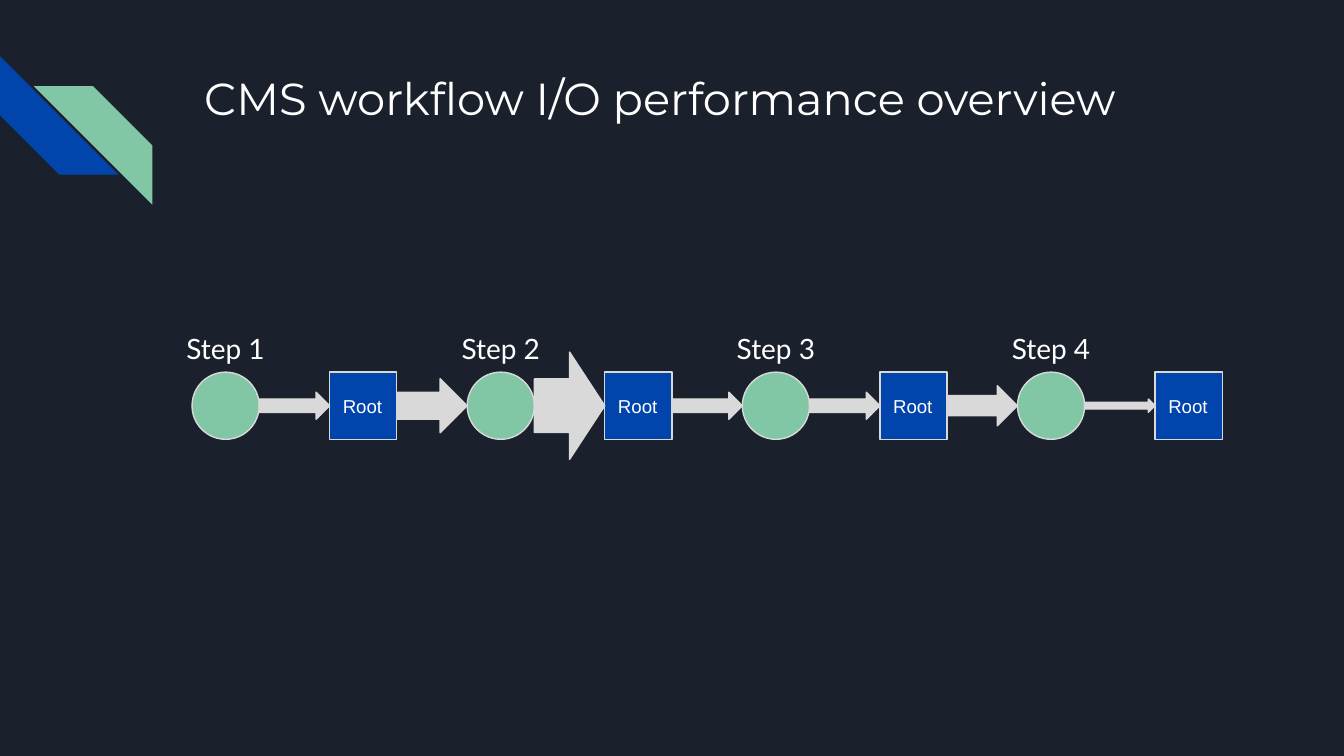
from dataclasses import dataclass

from pptx import Presentation
from pptx.dml.color import RGBColor
from pptx.enum.shapes import MSO_SHAPE
from pptx.enum.text import MSO_ANCHOR, MSO_AUTO_SIZE, PP_ALIGN
from pptx.util import Cm, Pt


@dataclass(frozen=True)
class Theme:
    background: RGBColor = RGBColor(0x1B, 0x21, 0x2C)
    blue: RGBColor = RGBColor(0x01, 0x45, 0xAC)
    green: RGBColor = RGBColor(0x82, 0xC7, 0xA5)
    grey: RGBColor = RGBColor(0xD9, 0xD9, 0xD9)
    white: RGBColor = RGBColor(0xFF, 0xFF, 0xFF)
    title_size: int = 24
    label_size: int = 15
    node_size: int = 10
    line_width: float = 0.75


theme = Theme()


def write_text(shape, text, *, font, size, align=PP_ALIGN.LEFT,
               anchor=MSO_ANCHOR.TOP, line_spacing=1.0, space_after=0):
    frame = shape.text_frame
    frame.word_wrap = True
    frame.auto_size = MSO_AUTO_SIZE.NONE
    frame.vertical_anchor = anchor
    frame.margin_left = frame.margin_right = Cm(0.25)
    frame.margin_top = frame.margin_bottom = Cm(0.25)
    paragraph = frame.paragraphs[0]
    paragraph.alignment = align
    paragraph.line_spacing = line_spacing
    paragraph.space_after = Pt(space_after)
    run = paragraph.add_run()
    run.text = text
    run.font.name = font
    run.font.size = Pt(size)
    run.font.color.rgb = theme.white


def add_shape(kind, left, top, width, height, fill, outlined=True):
    shape = slide.shapes.add_shape(kind, Cm(left), Cm(top), Cm(width), Cm(height))
    shape.shadow.inherit = False
    shape.fill.solid()
    shape.fill.fore_color.rgb = fill
    if outlined:
        shape.line.color.rgb = theme.grey
        shape.line.width = Pt(theme.line_width)
    else:
        shape.line.fill.background()
    return shape


presentation = Presentation()
presentation.slide_width = Cm(25.4)
presentation.slide_height = Cm(14.29)
slide = presentation.slides.add_slide(presentation.slide_layouts[5])
slide.background.fill.solid()
slide.background.fill.fore_color.rgb = theme.background

# Corner stripes
for left, top, rotation, color in ((0, 1.06, 270, theme.blue),
                                   (0.64, 1.63, 90, theme.green)):
    stripe = add_shape(MSO_SHAPE.DIAGONAL_STRIPE, left, top, 2.24, 2.24, color,
                       outlined=False)
    stripe.rotation = rotation

# Title
title = slide.shapes.title
title.left, title.top, title.width, title.height = Cm(3.61), Cm(1.09), Cm(19.56), Cm(2.54)
write_text(title, "CMS workflow I/O performance overview",
           font="Montserrat", size=theme.title_size)

# Workflow chain: each step circle is followed by a Root square
node_size = 1.27
pitch = 2.6
first_left = 3.63
center_y = 7.67
node_top = center_y - node_size / 2
label_width = 2.41

for step in range(4):
    circle_left = first_left + 2 * step * pitch
    add_shape(MSO_SHAPE.OVAL, circle_left, node_top, node_size, node_size, theme.green)
    square = add_shape(MSO_SHAPE.RECTANGLE, circle_left + pitch, node_top,
                       node_size, node_size, theme.blue)
    write_text(square, "Root", font="Arial", size=theme.node_size,
               anchor=MSO_ANCHOR.MIDDLE)
    label_left = circle_left + (node_size - label_width) / 2
    label = slide.shapes.add_textbox(Cm(label_left), Cm(5.92), Cm(label_width), Cm(0.91))
    write_text(label, f"Step {step + 1}", font="Lato", size=theme.label_size,
               align=PP_ALIGN.CENTER, line_spacing=1.15, space_after=16)

# Arrows between neighbours, their thickness showing the data volume
arrow_heights = (0.51, 1.02, 2.03, 0.51, 0.51, 0.76, 0.25)
for index, height in enumerate(arrow_heights):
    add_shape(MSO_SHAPE.RIGHT_ARROW, first_left + index * pitch + node_size,
              center_y - height / 2, pitch - node_size, height, theme.grey)

presentation.save("out.pptx")
